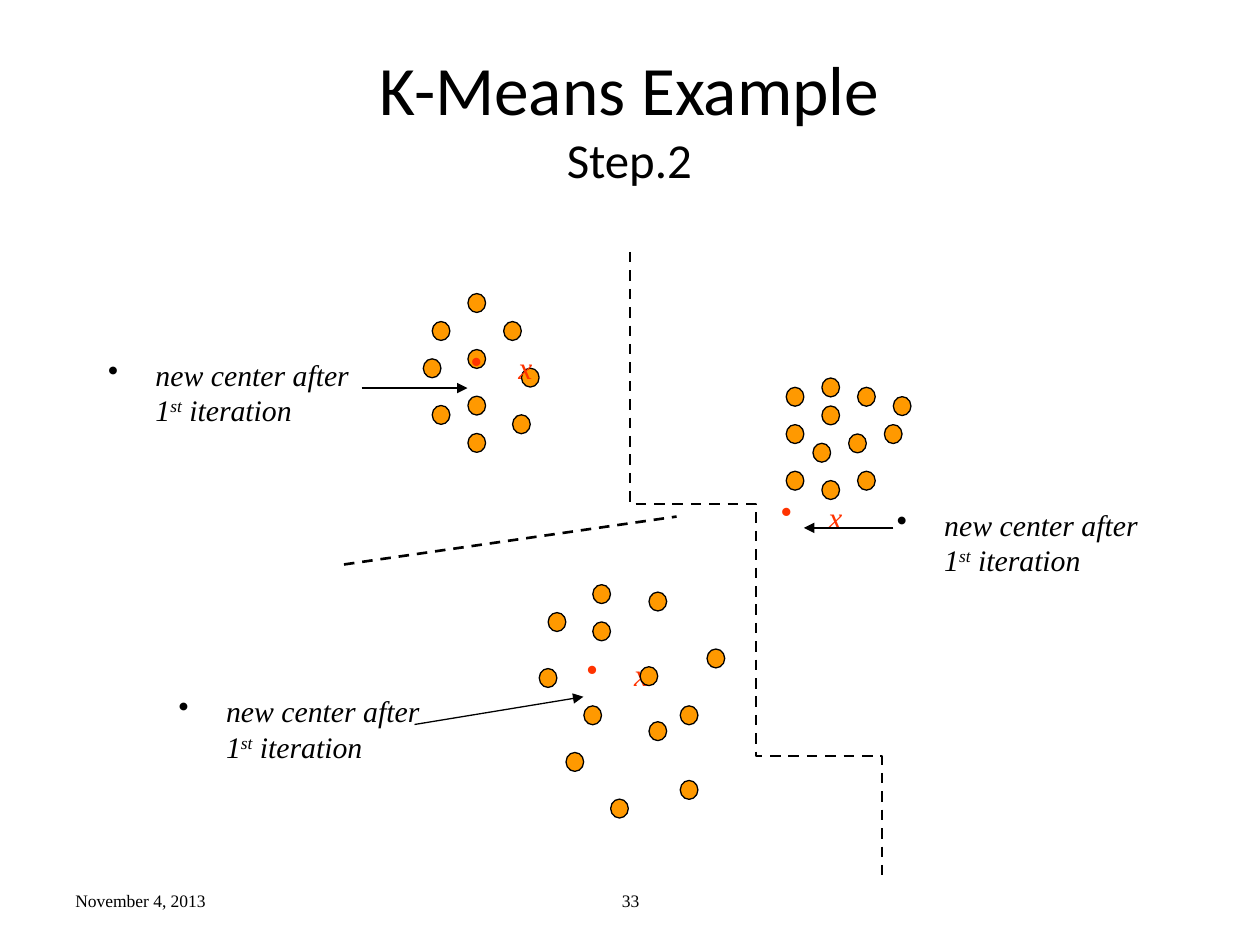
from lxml import etree
from pptx import Presentation
from pptx import util as u
from pptx.dml.color import RGBColor
from pptx.enum import dml, shapes, text
from pptx.oxml.ns import qn

COLORS = {"ink": "000000", "point": "FF9900", "center": "FF3300"}
SERIF = "Times New Roman"

# Grid pitch on which the data points sit, and the size of a point
COLUMN, ROW = 0.85 / 12, 1.11 / 15
POINT_SIZE = (0.14, 0.15)

# Each cluster: origin in inches, then points as (column, row)
UPPER_CLUSTER = (3.36, 2.33), [
    (5, 0), (1, 3), (9, 3), (5, 6), (0, 7), (11, 8), (5, 11), (5, 15), (1, 12), (10, 13)]
RIGHT_CLUSTER = (6.24, 3.0), [
    (4, 0), (0, 1), (8, 1), (4, 3), (0, 5), (3, 7), (0, 10), (4, 11), (12, 2),
    (7, 6), (11, 5), (8, 10)]
LOWER_CLUSTER = (4.28, 4.64), [
    (6, 0), (12.3, 0.8), (6, 4), (1, 3), (0, 9), (11.3, 8.8), (18.8, 6.9), (5, 13),
    (15.8, 13), (12.3, 14.7), (3, 18), (8, 23), (15.8, 21)]

# Boundary: a curved upper part (start, control, control, end), then a jagged tail
BOUNDARY_CURVES = [
    [(5.3, 2.04), (5.27, 2.19), (5.25, 2.35), (5.23, 2.5)],
    [(5.23, 2.5), (5.23, 2.8), (5.18, 3.61), (5.41, 3.97)],
    [(5.41, 3.97), (5.44, 4.1), (5.49, 4.2), (5.54, 4.32)]]
BOUNDARY_TAIL = [
    (5.64, 4.55), (5.75, 4.77), (5.79, 4.87), (5.88, 5.05), (5.9, 5.1), (6.02, 5.29),
    (6.15, 5.57), (6.25, 5.79), (6.28, 5.9), (6.37, 6.03), (6.45, 6.15), (6.46, 6.2),
    (6.52, 6.29), (6.55, 6.39), (6.58, 6.43), (6.64, 6.58), (6.72, 6.75)]


def color(name):
    return RGBColor.from_string(COLORS[name])


def inches(*lengths):
    return [u.Inches(length) for length in lengths]


def add_run(paragraph, content, size, font=SERIF, ink="ink", italic=False, baseline=0):
    run = paragraph.add_run()
    run.text = content
    run.font.size, run.font.name, run.font.italic = u.Pt(size), font, italic
    run.font.color.rgb = color(ink)
    if baseline:
        run._r.get_or_add_rPr().set("baseline", str(baseline * 1000))


def add_bullet(paragraph, indent=0.375):
    properties = paragraph._p.get_or_add_pPr()
    properties.set("marL", str(u.Inches(indent)))
    properties.set("indent", str(-u.Inches(indent)))
    etree.SubElement(properties, qn("a:buChar")).set("char", "•")


def add_text(slide, box, parts, bullet=False, align=text.PP_ALIGN.LEFT,
             anchor=text.MSO_ANCHOR.TOP, **style):
    """Parts are (words, baseline percent) pairs that share one style."""
    frame = slide.shapes.add_textbox(*inches(*box)).text_frame
    frame.word_wrap, frame.vertical_anchor = True, anchor
    paragraph = frame.paragraphs[0]
    paragraph.alignment = align
    if bullet:
        add_bullet(paragraph)
    for words, baseline in parts:
        add_run(paragraph, words, baseline=baseline, **style)


def add_title(slide):
    title = slide.shapes.title
    title.left, title.top, title.width, title.height = inches(0.76, 0.53, 8.47, 0.8)
    title.text_frame.vertical_anchor = text.MSO_ANCHOR.MIDDLE
    paragraph = title.text_frame.paragraphs[0]
    paragraph.alignment = text.PP_ALIGN.CENTER
    add_run(paragraph, "K-Means Example", 39.6, font="Calibri")
    paragraph.add_line_break()
    add_run(paragraph, "Step.2", 27.9, font="Calibri")


def add_cluster(slide, cluster):
    (left, top), points = cluster
    for column, row in points:
        point = slide.shapes.add_shape(
            shapes.MSO_SHAPE.FLOWCHART_CONNECTOR,
            *inches(left + column * COLUMN, top + row * ROW, *POINT_SIZE))
        point.shadow.inherit = False
        point.fill.solid()
        point.fill.fore_color.rgb = color("point")
        format_line(point.line, 0.75)


def format_line(line, width, dashed=False):
    line.color.rgb, line.width = color("ink"), u.Pt(width)
    if dashed:
        line.dash_style = dml.MSO_LINE.DASH


def add_line(slide, start, end, width=0.75, dashed=False, arrow=False):
    connector = slide.shapes.add_connector(
        shapes.MSO_CONNECTOR.STRAIGHT, *inches(*start, *end))
    format_line(connector.line, width, dashed)
    properties = connector._element.spPr
    if arrow:
        etree.SubElement(properties.find(qn("a:ln")), qn("a:tailEnd")).set("type", "triangle")
    etree.SubElement(properties, qn("a:effectLst"))


def curve_points(controls, steps=8):
    for step in range(1, steps + 1):
        t = step / steps
        weights = ((1 - t) ** 3, 3 * t * (1 - t) ** 2, 3 * t ** 2 * (1 - t), t ** 3)
        yield tuple(sum(w * c[axis] for w, c in zip(weights, controls)) for axis in (0, 1))


def add_boundary(slide):
    vertices = [vertex for curve in BOUNDARY_CURVES for vertex in curve_points(curve)]
    builder = slide.shapes.build_freeform(*BOUNDARY_CURVES[0][0], scale=u.Inches(1))
    builder.add_line_segments(vertices + BOUNDARY_TAIL, close=False)
    boundary = builder.convert_to_shape()
    boundary.shadow.inherit = False
    boundary.fill.background()
    format_line(boundary.line, 1.5, dashed=True)


def main():
    presentation = Presentation()
    presentation.slide_width, presentation.slide_height = inches(10, 7.5)
    slide = presentation.slides.add_slide(presentation.slide_layouts[5])

    # Title and footer
    add_title(slide)
    middle = text.MSO_ANCHOR.MIDDLE
    add_text(slide, (0.5, 6.95, 2.33, 0.4), [("November 4, 2013", 0)], anchor=middle, size=10)
    add_text(slide, (3.42, 6.95, 3.17, 0.4), [("33", 0)], anchor=middle,
             align=text.PP_ALIGN.CENTER, size=10)

    # Upper clusters and the borders between clusters
    add_cluster(slide, UPPER_CLUSTER)
    add_cluster(slide, RIGHT_CLUSTER)
    add_line(slide, (2.73, 4.48), (5.37, 4.1), width=1.5, dashed=True)
    add_boundary(slide)

    # New centers
    for left, top in [(6.1, 3.9), (3.64, 2.71), (4.56, 5.15)]:
        add_text(slide, (left, top, 0.28, 0.4), [("x", 0)], bullet=True,
                 size=18, ink="center", italic=True)

    # Labels with their arrows
    label = [("new center after 1", 0), ("st", 30), (" iteration", 0)]
    for corner, start, end in [((0.76, 2.78), (2.87, 3.08), (3.71, 3.08)),
                               ((1.32, 5.45), (3.29, 5.75), (4.63, 5.53)),
                               ((7.02, 3.97), (7.09, 4.19), (6.38, 4.19))]:
        add_text(slide, (*corner, 2.21, 0.67), label, bullet=True, size=17, italic=True)
        add_line(slide, start, end, arrow=True)

    # The lower cluster lies over its center
    add_cluster(slide, LOWER_CLUSTER)
    presentation.save("out.pptx")


if __name__ == "__main__":
    main()
